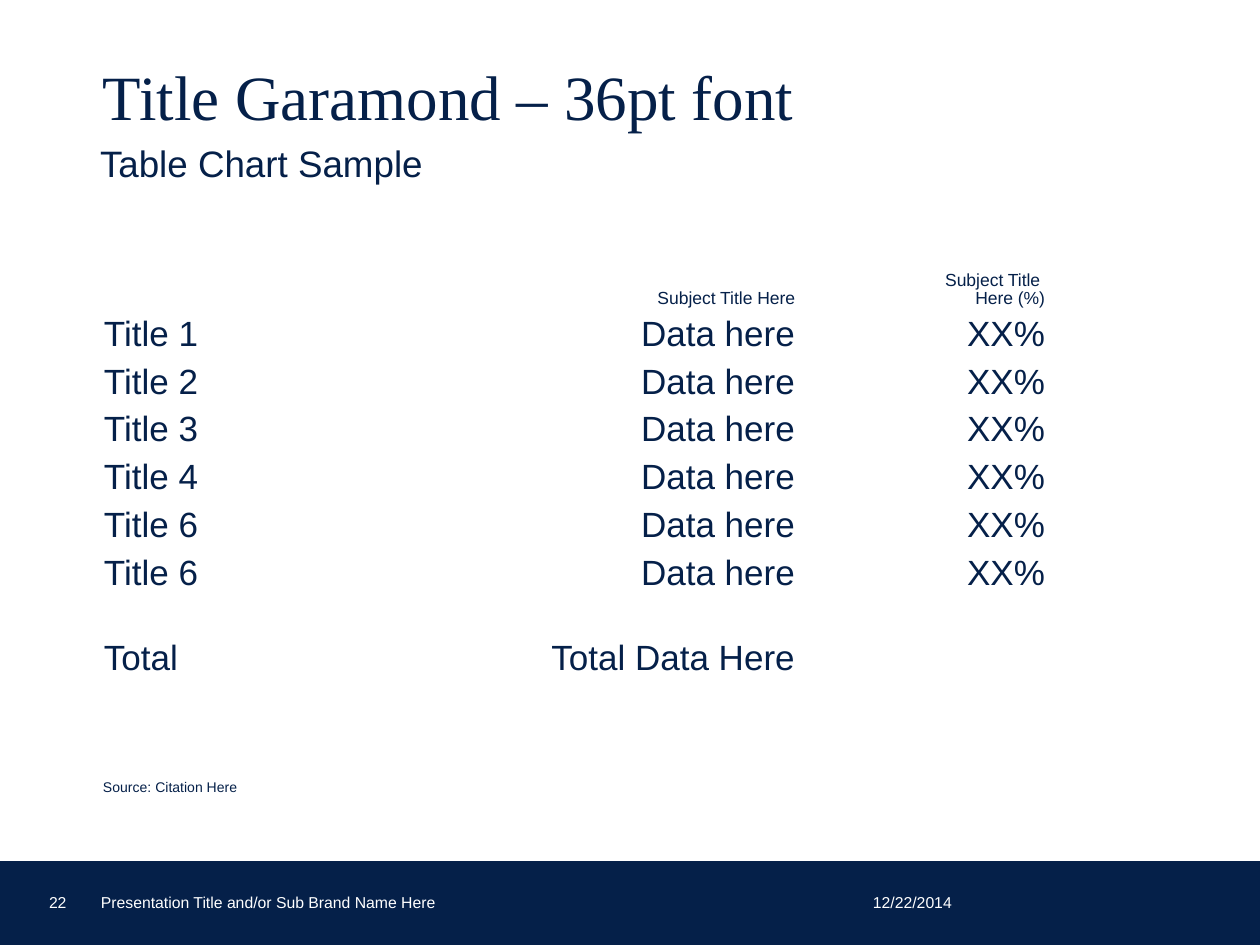
import pptx
import pptx.dml.color
import pptx.enum.shapes
import pptx.enum.text
import pptx.util

COLORS = {"navy": "052049", "white": "FFFFFF"}
ALIGN = pptx.enum.text.PP_ALIGN
ANCHOR = pptx.enum.text.MSO_ANCHOR


def px(length):
    """Turn px into EMU."""
    return pptx.util.Inches(length / 126)


def color(name):
    """Look up a named colour."""
    return pptx.dml.color.RGBColor.from_string(COLORS[name])


def write(frame, text, size, font="Arial", ink="navy", align=ALIGN.LEFT, spacing=0.9):
    """Put one formatted paragraph into a text frame."""
    para = frame.paragraphs[0]
    para.text = text
    para.alignment = align
    para.line_spacing = spacing
    for span in para.runs:
        span.font.size = pptx.util.Pt(size)
        span.font.name = font
        span.font.bold = False
        span.font.color.rgb = color(ink)


def add_text(page, box, text, size, inset=(0, 0), anchor=ANCHOR.BOTTOM, **look):
    """Add a text box with equal side and equal top and bottom insets."""
    frame = page.shapes.add_textbox(*map(px, box)).text_frame
    frame.word_wrap = True
    frame.vertical_anchor = anchor
    frame.margin_left = frame.margin_right = px(inset[0])
    frame.margin_top = frame.margin_bottom = px(inset[1])
    write(frame, text, size, **look)


def add_heading(page, box):
    """Place the title with the subtitle below it."""
    left, top, width, height = box
    add_text(page, (left, top, width, 79), "Title Garamond – 36pt font", 36,
             inset=(12, 6), font="Times New Roman", spacing=0.85)
    add_text(page, (left - 3, top + 79, width, height - 79), "Table Chart Sample", 21,
             inset=(12, 6))


def add_data_table(page, box):
    """Place the table of titles, data and percentages."""
    labels = ["Title 1", "Title 2", "Title 3", "Title 4", "Title 6", "Title 6"]
    rows = [["", "Subject Title Here", "Subject Title \vHere (%)"]]
    rows += [[label, "Data here", "XX%"] for label in labels]
    rows += [["Total", "Total Data Here", ""]]
    widths = [382, 333, 250]
    heights = [47] + [48] * len(labels) + [82]
    table = page.shapes.add_table(len(rows), len(widths), *map(px, box)).table
    table.first_row = table.horz_banding = False
    for column, width in zip(table.columns, widths):
        column.width = px(width)
    for i, (texts, height) in enumerate(zip(rows, heights)):
        table.rows[i].height = px(height)
        header, total = i == 0, i == len(rows) - 1
        for j, text in enumerate(texts):
            cell = table.cell(i, j)
            cell.fill.background()
            cell.margin_left = cell.margin_right = px(12)
            cell.margin_top = px(1 if header else 42 if total and text else 5)
            cell.margin_bottom = px(2 if total else 5)
            cell.vertical_anchor = ANCHOR.BOTTOM if header else ANCHOR.TOP
            if text:
                write(cell.text_frame, text, 10 if header else 20,
                      align=ALIGN.RIGHT if j else ALIGN.LEFT)


def add_footer(page, box):
    """Place the footer bar with page number, name and date."""
    top = box[1]
    bar = page.shapes.add_shape(pptx.enum.shapes.MSO_SHAPE.RECTANGLE, *map(px, box))
    bar.shadow.inherit = False
    bar.fill.solid()
    bar.fill.fore_color.rgb = bar.line.color.rgb = color("navy")
    bar.line.width = pptx.util.Pt(1.5)
    items = [(49, 34, "22"),
             (101, 593, "Presentation Title and/or Sub Brand Name Here"),
             (873, 127, "12/22/2014")]
    for left, width, text in items:
        add_text(page, (left, top + 29, width, 21), text, 9, ink="white", spacing=1.0)


def main():
    """Build and save the slide."""
    deck = pptx.Presentation()
    deck.slide_width, deck.slide_height = px(1260), px(945)
    page = deck.slides.add_slide(deck.slide_layouts[6])
    add_footer(page, (0, 862, 1260, 83))
    add_heading(page, (91, 60, 1114, 132))
    add_data_table(page, (92, 266, 965, 417))
    add_text(page, (103, 780, 209, 15), "Source: Citation Here", 8, anchor=ANCHOR.TOP)
    deck.save("out.pptx")


if __name__ == "__main__":
    main()
